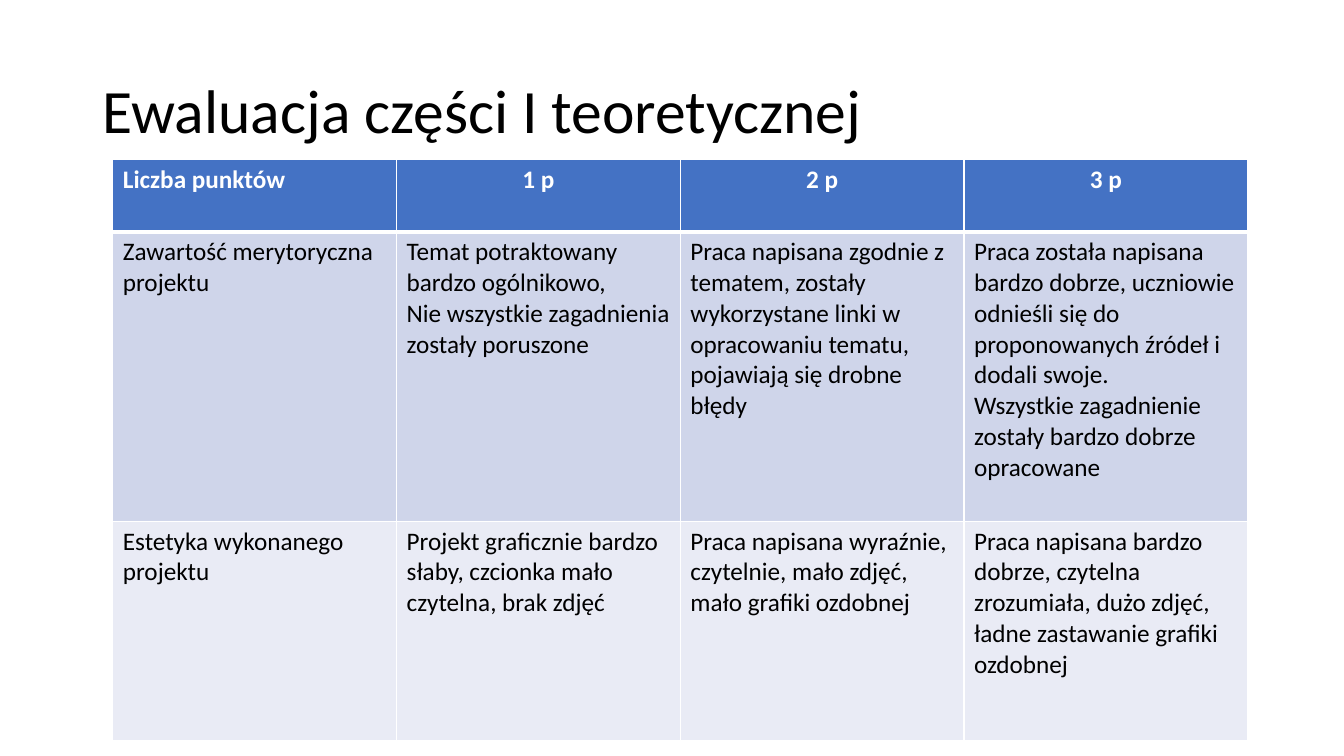
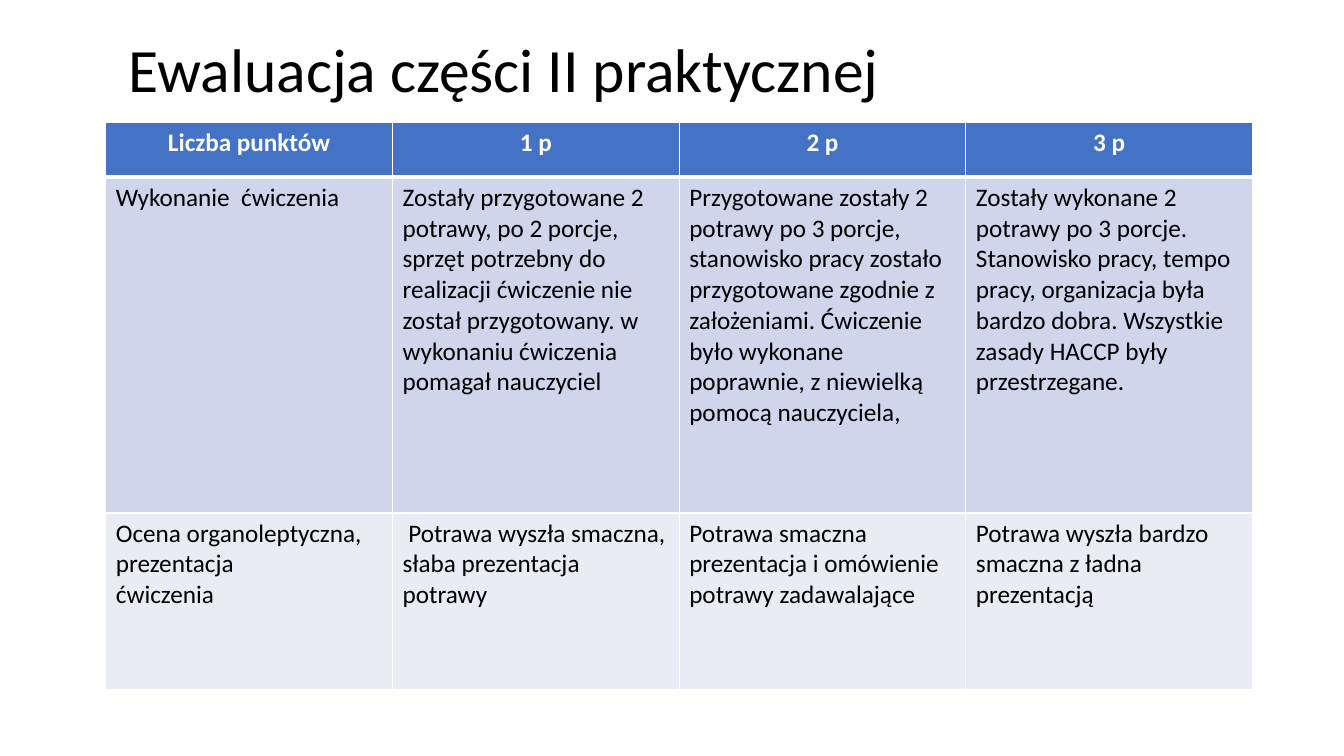
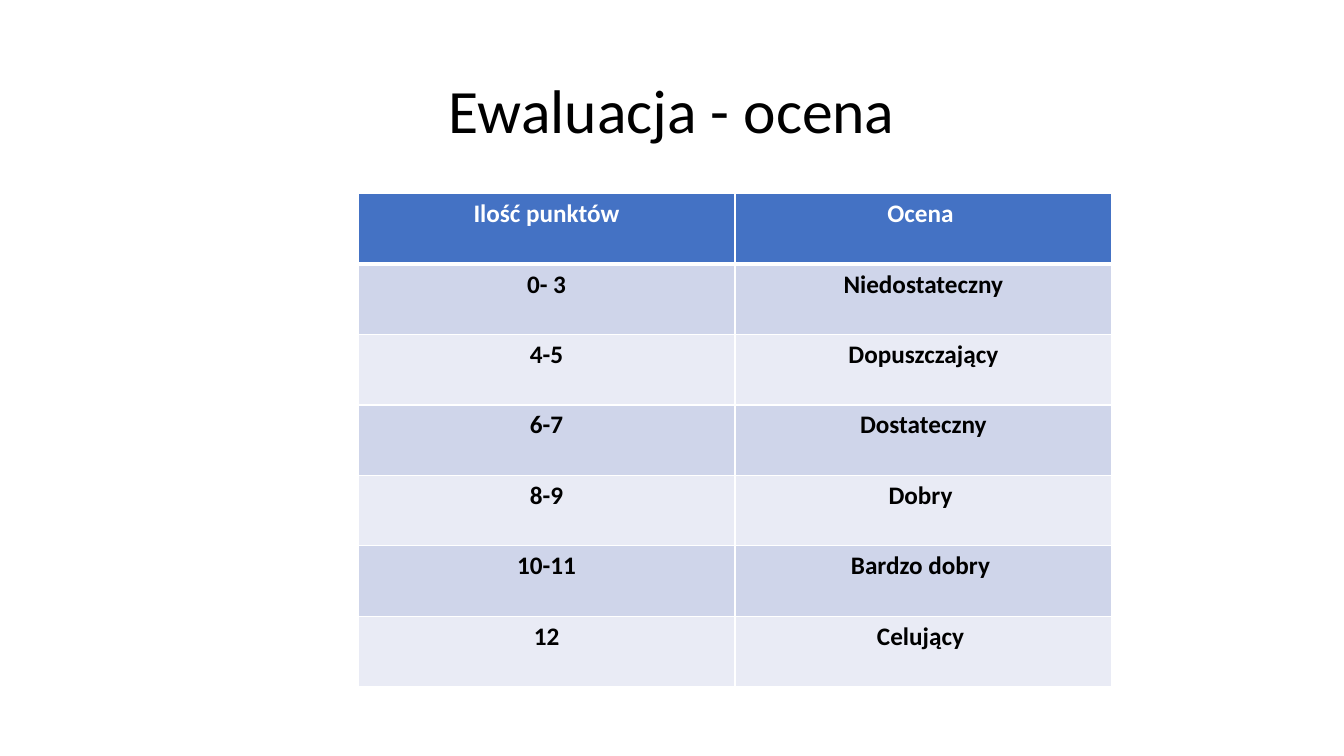
from lxml import etree
from pptx import Presentation
from pptx.dml.color import RGBColor
from pptx.enum import text
from pptx.oxml import ns
from pptx.util import Pt

LEFT, CENTER = text.PP_ALIGN.LEFT, text.PP_ALIGN.CENTER
FONT = "Calibri"
COLORS = {"text": "000000", "header": "4472C4", "header_text": "FFFFFF",
          "band_odd": "CFD5EA", "band_even": "E9EBF5", "border": "FFFFFF"}

# Content: boxes and row heights in points; a line break starts a new paragraph
POINTS = ["Liczba punktów", "1 p", "2 p", "3 p"]
SLIDES = [
    {"title": "Ewaluacja części I teoretycznej",
     "title_box": (66, 28.8, 828, 104.4), "title_align": LEFT,
     "table_at": (80.6, 113.8), "col_width": 202.7, "row_heights": [51.8, 206.7, 157],
     "first_header_align": LEFT, "body_align": LEFT, "body_bold": False,
     "rows": [
         POINTS,
         ["Zawartość merytoryczna projektu",
          "Temat potraktowany bardzo ogólnikowo,\n"
          "Nie wszystkie zagadnienia zostały poruszone",
          "Praca napisana zgodnie z tematem, zostały wykorzystane linki w "
          "opracowaniu tematu, pojawiają się drobne błędy",
          "Praca została napisana bardzo dobrze, uczniowie odnieśli się do "
          "proponowanych źródeł i dodali swoje.\n"
          "Wszystkie zagadnienie zostały bardzo dobrze opracowane"],
         ["Estetyka wykonanego projektu",
          "Projekt graficznie bardzo słaby, czcionka mało czytelna, brak zdjęć",
          "Praca napisana wyraźnie, czytelnie, mało zdjęć, mało grafiki ozdobnej",
          "Praca napisana bardzo dobrze, czytelna zrozumiała, dużo zdjęć, "
          "ładne zastawanie grafiki ozdobnej"]]},
    {"title": "Ewaluacja części II praktycznej",
     "title_box": (84.4, 16.4, 748, 71.4), "title_align": LEFT,
     "table_at": (75.6, 87.8), "col_width": 204.8, "row_heights": [38.9, 239.8, 126],
     "first_header_align": CENTER, "body_align": LEFT, "body_bold": False,
     "rows": [
         POINTS,
         ["Wykonanie  ćwiczenia",
          "Zostały przygotowane 2 potrawy, po 2 porcje, sprzęt potrzebny do "
          "realizacji ćwiczenie nie został przygotowany. w wykonaniu ćwiczenia "
          "pomagał nauczyciel",
          "Przygotowane zostały 2 potrawy po 3 porcje, stanowisko pracy zostało "
          "przygotowane zgodnie z założeniami. Ćwiczenie było wykonane poprawnie, "
          "z niewielką pomocą nauczyciela,",
          "Zostały wykonane 2 potrawy po 3 porcje. Stanowisko pracy, tempo pracy, "
          "organizacja była bardzo dobra. Wszystkie zasady HACCP były przestrzegane."],
         ["Ocena organoleptyczna,\nprezentacja\nćwiczenia",
          " Potrawa wyszła smaczna, słaba prezentacja potrawy",
          "Potrawa smaczna prezentacja i omówienie potrawy zadawalające",
          "Potrawa wyszła bardzo smaczna z ładna prezentacją"]]},
    {"title": "Ewaluacja - ocena",
     "title_box": (66, 28.8, 828, 104.4), "title_align": CENTER,
     "table_at": (255.8, 138.4), "col_width": 269.2, "row_heights": [50.3] * 7,
     "first_header_align": CENTER, "body_align": CENTER, "body_bold": True,
     "rows": [
         ["Ilość punktów", "Ocena "],
         ["0- 3", "Niedostateczny"],
         ["4-5", "Dopuszczający"],
         ["6-7", "Dostateczny"],
         ["8-9", "Dobry "],
         ["10-11", "Bardzo dobry "],
         ["12", "Celujący "]]},
]


def format_text(tf, size, color, align, bold=False):
    for p in tf.paragraphs:
        p.alignment = align
        for r in p.runs:
            r.font.name, r.font.size, r.font.bold = FONT, Pt(size), bold
            r.font.color.rgb = RGBColor.from_string(COLORS[color])


def add_borders(cell, top, bottom):
    tc_pr = cell._tc.get_or_add_tcPr()
    for side, width in (("L", 1), ("R", 1), ("T", top), ("B", bottom)):
        line = etree.SubElement(tc_pr, ns.qn("a:ln" + side), w=str(Pt(width)))
        fill = etree.SubElement(line, ns.qn("a:solidFill"))
        etree.SubElement(fill, ns.qn("a:srgbClr"), val=COLORS["border"])


def add_title(s, data):
    title = s.shapes.title
    title.left, title.top, title.width, title.height = map(Pt, data["title_box"])
    tf = title.text_frame
    tf.text = data["title"]
    tf.word_wrap = True
    tf.auto_size = text.MSO_AUTO_SIZE.NONE
    tf.vertical_anchor = text.MSO_ANCHOR.MIDDLE
    tf.paragraphs[0].line_spacing = 0.9
    format_text(tf, 44, "text", data["title_align"])


def add_grid(s, data):
    rows, heights = data["rows"], data["row_heights"]
    cols = len(rows[0])
    size = (cols * data["col_width"], sum(heights))
    table = s.shapes.add_table(len(rows), cols, *map(Pt, data["table_at"] + size)).table
    for column in table.columns:
        column.width = Pt(data["col_width"])
    for i, row in enumerate(rows):
        table.rows[i].height = Pt(heights[i])
        header = i == 0
        band = "header" if header else "band_odd" if i % 2 else "band_even"
        for j, content in enumerate(row):
            cell = table.cell(i, j)
            cell.text_frame.text = content
            # Borders precede the fill in the cell properties
            add_borders(cell, 3 if i == 1 else 1, 3 if header else 1)
            cell.fill.solid()
            cell.fill.fore_color.rgb = RGBColor.from_string(COLORS[band])
            if header:
                align = CENTER if j else data["first_header_align"]
                format_text(cell.text_frame, 18, "header_text", align, True)
            else:
                format_text(cell.text_frame, 18, "text", data["body_align"], data["body_bold"])


def main():
    prs = Presentation()
    prs.slide_width, prs.slide_height = Pt(960), Pt(540)
    for data in SLIDES:
        s = prs.slides.add_slide(prs.slide_layouts[5])
        add_title(s, data)
        add_grid(s, data)
    prs.save("out.pptx")


if __name__ == "__main__":
    main()
